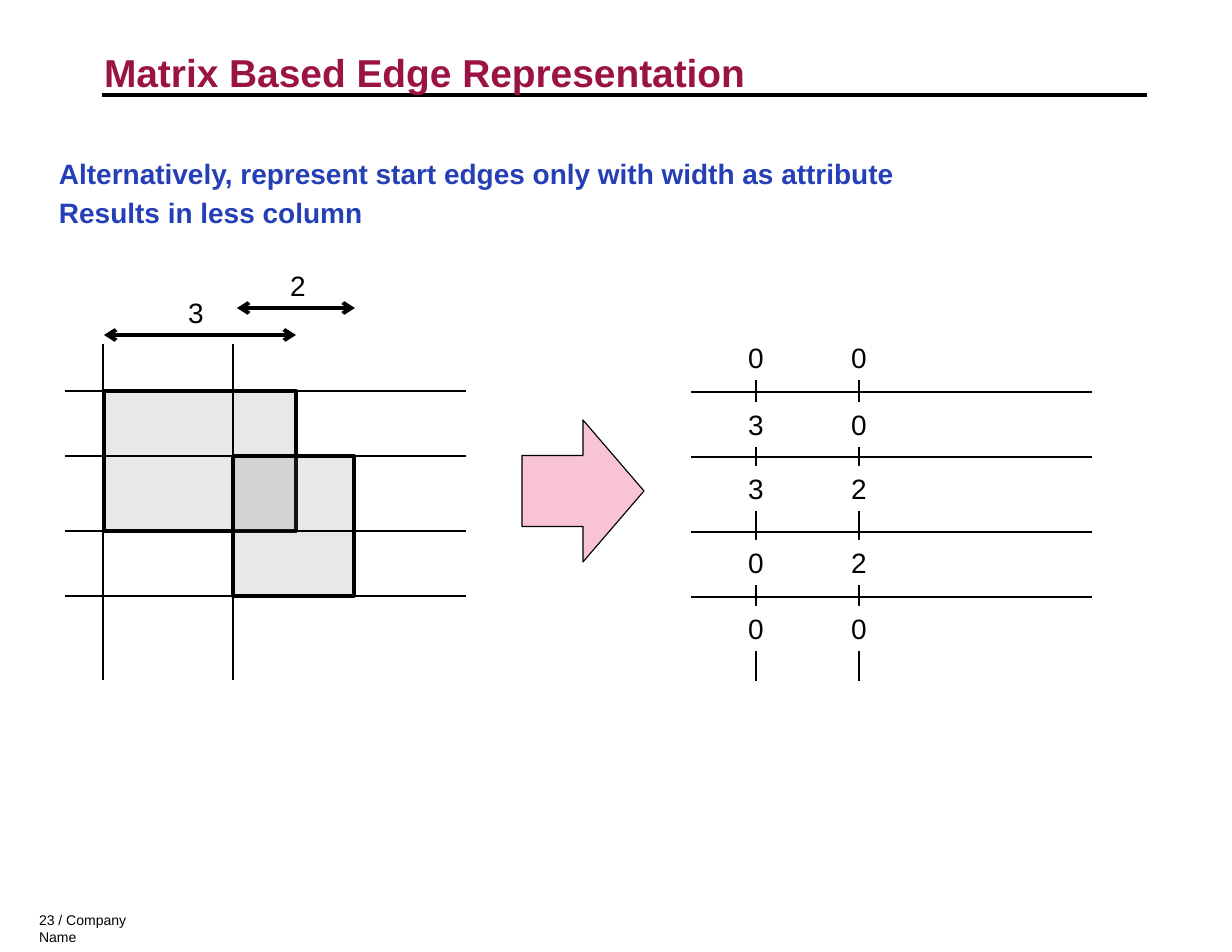
from dataclasses import dataclass

from lxml.etree import SubElement
from pptx import Presentation
from pptx.dml.color import RGBColor
from pptx.enum.shapes import MSO_CONNECTOR, MSO_SHAPE
from pptx.enum.text import MSO_ANCHOR, MSO_AUTO_SIZE, PP_ALIGN
from pptx.oxml.ns import qn
from pptx.util import Emu, Pt

EMU_PER_PX = 914400 / 112
SLIDE_SIZE = (1232, 952)
LABEL_SIZE = (38, 45)
GRID_ROWS = (47, 112, 187, 252)
CELL_TOPS = (-10, 57, 121, 195, 261)


@dataclass(frozen=True)
class Theme:
    font: str = "Arial"
    ink: str = "000000"
    paper: str = "FFFFFF"
    heading: str = "9B1244"
    statement: str = "253FB6"
    polygon: str = "777777"
    polygon_alpha: int = 17
    arrow: str = "F8C3D6"
    title_size: int = 25
    body_size: int = 18
    footer_size: int = 9
    thin: float = 0.75
    outline: float = 2.25
    thick: float = 2.5


THEME = Theme()


def px(length):
    return Emu(round(length * EMU_PER_PX))


def rgb(value):
    return RGBColor.from_string(value)


def format_text(frame, size, color, bold=False, align=PP_ALIGN.LEFT):
    for paragraph in frame.paragraphs:
        paragraph.alignment = align
        for run in paragraph.runs:
            run.font.name = THEME.font
            run.font.size = Pt(size)
            run.font.bold = bold
            run.font.color.rgb = rgb(color)


def set_insets(frame, horizontal, vertical):
    frame.margin_left = frame.margin_right = px(horizontal)
    frame.margin_top = frame.margin_bottom = px(vertical)


def draw_line(slide, start, end, width, arrows=False):
    line = slide.shapes.add_connector(
        MSO_CONNECTOR.STRAIGHT, *map(px, (*start, *end)))
    line.line.width = Pt(width)
    line.line.color.rgb = rgb(THEME.ink)
    properties = line.element.spPr
    if arrows:
        outline = properties.find(qn("a:ln"))
        for end_name in ("a:headEnd", "a:tailEnd"):
            SubElement(outline, qn(end_name), type="arrow")
    SubElement(properties, qn("a:effectLst"))
    return line


def draw_shape(slide, kind, box, fill, line_width=None):
    shape = slide.shapes.add_shape(kind, *map(px, box))
    shape.shadow.inherit = False
    shape.fill.solid()
    shape.fill.fore_color.rgb = rgb(fill)
    if line_width is None:
        shape.line.fill.background()
    else:
        shape.line.width = Pt(line_width)
        shape.line.color.rgb = rgb(THEME.ink)
    return shape


def write_number(frame, number):
    frame.text = str(number)
    frame.word_wrap = False
    frame.vertical_anchor = MSO_ANCHOR.MIDDLE
    format_text(frame, THEME.body_size, THEME.ink, align=PP_ALIGN.CENTER)


def add_heading(slide, box):
    left, top, width, height = box
    title = slide.shapes.title
    title.left, title.top, title.width, title.height = map(px, box)
    frame = title.text_frame
    frame.text = "Matrix Based Edge Representation"
    frame.auto_size = MSO_AUTO_SIZE.NONE
    frame.vertical_anchor = MSO_ANCHOR.TOP
    set_insets(frame, 0, 7)
    frame.paragraphs[0].line_spacing = 1.1
    format_text(frame, THEME.title_size, THEME.heading, bold=True)
    underline = draw_line(slide, (left - 2, top + 58),
                          (left + width + 1, top + 58), THEME.thick)
    title.element.addprevious(underline.element)


def add_statements(slide, box):
    frame = slide.shapes.add_textbox(*map(px, box)).text_frame
    frame.word_wrap = True
    set_insets(frame, 12, 7)
    frame.text = ("Alternatively, represent start edges only with width as attribute\n"
                  "Results in less column")
    for paragraph in frame.paragraphs:
        properties = paragraph._p.get_or_add_pPr()
        properties.set("marL", str(px(47)))
        properties.set("indent", str(px(-47)))
    frame.paragraphs[1].space_before = Pt(4)
    format_text(frame, THEME.body_size, THEME.statement, bold=True)


def add_grid(slide, box, columns):
    left, top, width, height = box
    for column in columns:
        draw_line(slide, (left + column, top),
                  (left + column, top + height), THEME.thin)
    for row in GRID_ROWS:
        draw_line(slide, (left, top + row), (left + width, top + row), THEME.thin)


def add_dimension(slide, start, length, label_center, number):
    left, top = start
    draw_line(slide, start, (left + length, top), THEME.thick, arrows=True)
    label_width, label_height = LABEL_SIZE
    label = slide.shapes.add_textbox(
        *map(px, (label_center - label_width // 2, top - label_height, *LABEL_SIZE)))
    write_number(label.text_frame, number)


def add_layout_view(slide, box):
    left, top, width, height = box
    polygons = ((39, GRID_ROWS[0], 192), (168, GRID_ROWS[1], 121))
    for x, y, polygon_width in polygons:
        polygon = draw_shape(slide, MSO_SHAPE.RECTANGLE,
                             (left + x, top + y, polygon_width, 140),
                             THEME.polygon, THEME.outline)
        color = polygon.element.spPr.find(qn("a:solidFill"))[0]
        SubElement(color, qn("a:alpha"), val=str(THEME.polygon_alpha * 1000))
    add_grid(slide, box, (38, 168))
    add_dimension(slide, (left + 39, top - 9), 192, left + 131, 3)
    add_dimension(slide, (left + 172, top - 36), 118, left + 233, 2)


def add_matrix_view(slide, box):
    left, top, width, height = box
    widths_by_column = {65: (0, 3, 3, 0, 0), 168: (0, 0, 2, 2, 0)}
    add_grid(slide, box, widths_by_column)
    for column, widths in widths_by_column.items():
        for cell_top, edge_width in zip(CELL_TOPS, widths):
            cell = draw_shape(slide, MSO_SHAPE.RECTANGLE,
                              (left + column - LABEL_SIZE[0] // 2,
                               top + cell_top, *LABEL_SIZE), THEME.paper)
            write_number(cell.text_frame, edge_width)


def add_footer(slide, box):
    frame = slide.shapes.add_textbox(*map(px, box)).text_frame
    frame.text = "23 / Company Name"
    frame.word_wrap = False
    format_text(frame, THEME.footer_size, THEME.ink)


def main():
    presentation = Presentation()
    presentation.slide_width, presentation.slide_height = map(px, SLIDE_SIZE)
    slide = presentation.slides.add_slide(presentation.slide_layouts[5])
    add_heading(slide, (104, 37, 1042, 95))
    add_footer(slide, (28, 906, 146, 28))
    add_statements(slide, (47, 149, 1044, 131))
    add_layout_view(slide, (65, 344, 401, 336))
    draw_shape(slide, MSO_SHAPE.RIGHT_ARROW, (522, 420, 122, 142),
               THEME.arrow, THEME.thin)
    add_matrix_view(slide, (691, 345, 401, 336))
    presentation.save("out.pptx")


if __name__ == "__main__":
    main()
